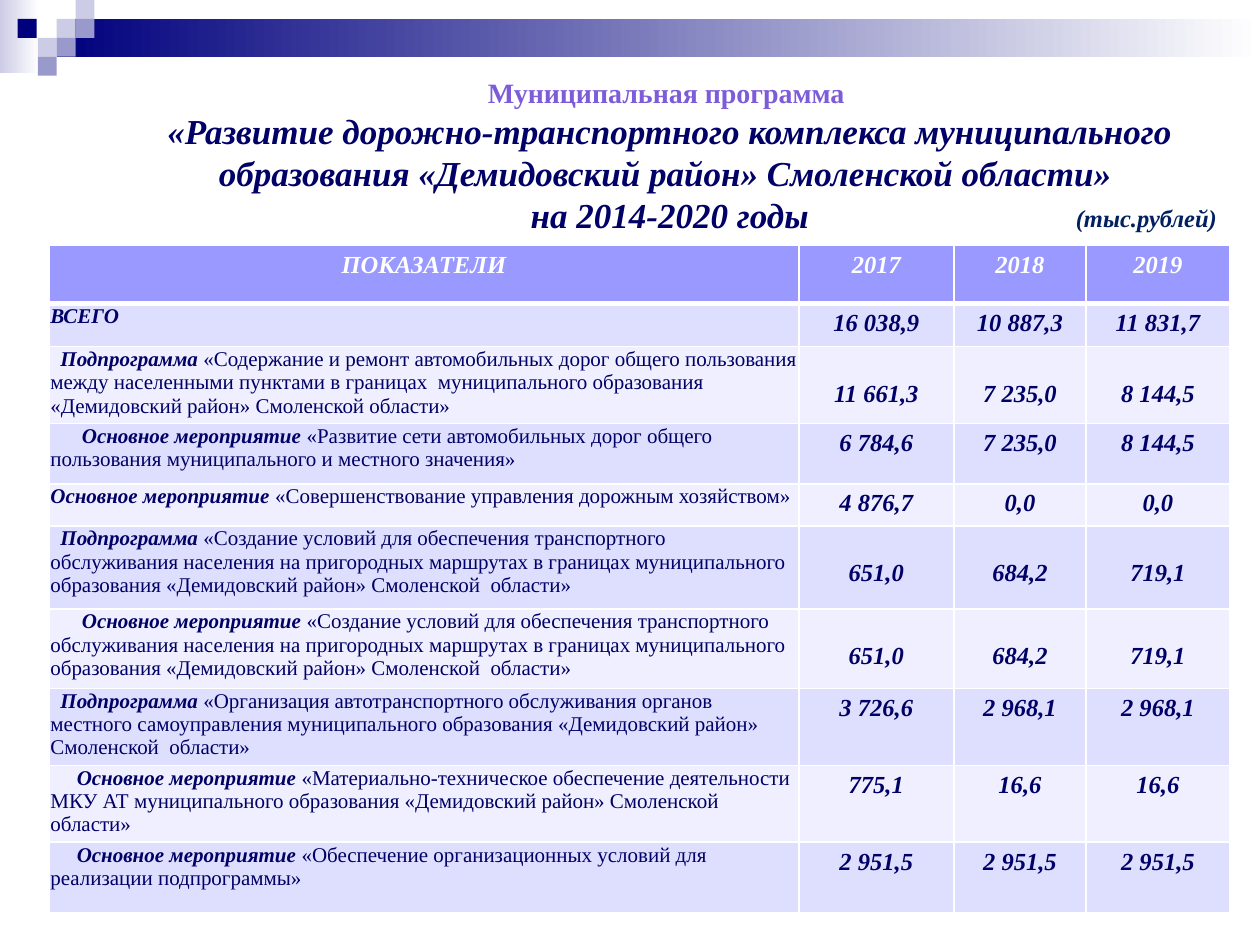
import pptx
import pptx.dml.color
import pptx.enum.shapes
import pptx.enum.text
import pptx.oxml
import pptx.oxml.ns
import pptx.util

Inches = pptx.util.Inches
Pt = pptx.util.Pt
FONT = "Times New Roman"
NAVY, WHITE = "000066", "FFFFFF"
BOLD = {"bold": True, "italic": True}
PLAIN = {"bold": False, "italic": False}
LEFT = pptx.enum.text.PP_ALIGN.LEFT
MID = pptx.enum.text.PP_ALIGN.CENTER
SUB, TASK = "Подпрограмма ", "Основное мероприятие "
ROUTES = ("«Создание условий для обеспечения транспортного обслуживания населения "
          "на пригородных маршрутах в границах муниципального образования "
          "«Демидовский район» Смоленской  области»")
HEAD = ["2017", "2018", "2019"]
ROWS = [
    (0.34, 0, "ВСЕГО", "", 0.05, ["16 038,9", "10 887,3", "11 831,7"]),
    (0.61, 0.08, SUB,
     "«Содержание и ремонт автомобильных дорог общего пользования между населенными "
     "пунктами в границах  муниципального образования «Демидовский район» "
     "Смоленской области»", 0.27, ["11 661,3", "7 235,0", "8 144,5"]),
    (0.48, 0.25, TASK,
     "«Развитие сети автомобильных дорог общего пользования муниципального "
     "и местного значения»", 0.05, ["6 784,6", "7 235,0", "8 144,5"]),
    (0.33, 0, TASK, "«Совершенствование управления дорожным хозяйством»",
     0.05, ["4 876,7", "0,0", "0,0"]),
    (0.66, 0.08, SUB, ROUTES, 0.27, ["651,0", "684,2", "719,1"]),
    (0.63, 0.25, TASK, ROUTES, 0.27, ["651,0", "684,2", "719,1"]),
    (0.61, 0.08, SUB,
     "«Организация автотранспортного обслуживания органов местного самоуправления "
     "муниципального образования «Демидовский район» Смоленской  области»",
     0.05, ["3 726,6", "2 968,1", "2 968,1"]),
    (0.61, 0.21, TASK,
     "«Материально-техническое обеспечение деятельности МКУ АТ муниципального "
     "образования «Демидовский район» Смоленской области»",
     0.05, ["775,1", "16,6", "16,6"]),
    (0.56, 0.21, TASK,
     "«Обеспечение организационных условий для реализации подпрограммы»",
     0.05, ["2 951,5", "2 951,5", "2 951,5"]),
]


def tint(code):
    return pptx.dml.color.RGBColor.from_string(code)


def put(item, vals):
    for name, val in vals.items():
        setattr(item, name, val)


def add_run(para, text, size, code, style):
    run = para.add_run()
    run.text = text
    put(run.font, {"name": FONT, "size": Pt(size), **style})
    run.font.color.rgb = tint(code)


def add_block(slide, x, y, w, h, *codes):
    kind = pptx.enum.shapes.MSO_SHAPE.RECTANGLE
    block = slide.shapes.add_shape(kind, *map(Inches, (x, y, w, h)))
    block.shadow.inherit = False
    block.line.fill.background()
    if len(codes) == 1:
        block.fill.solid()
        block.fill.fore_color.rgb = tint(codes[0])
        return
    block.fill.gradient()
    block.fill.gradient_angle = 0
    for stop, code in zip(block.fill.gradient_stops, codes):
        stop.color.rgb = tint(code)


def add_text(slide, x, y, w, h, lines, align, wrap):
    frame = slide.shapes.add_textbox(*map(Inches, (x, y, w, h))).text_frame
    frame.word_wrap = wrap
    for num, line in enumerate(lines):
        para = frame.add_paragraph() if num else frame.paragraphs[0]
        para.alignment = align
        add_run(para, *line)


def add_edge(cell, side, width):
    edge = pptx.oxml.parse_xml(
        f'<a:{side} {pptx.oxml.ns.nsdecls("a")} w="{Pt(width)}"><a:solidFill>'
        f'<a:srgbClr val="{WHITE}"/></a:solidFill></a:{side}>')
    cell._tc.get_or_add_tcPr().append(edge)


def fill_cell(cell, runs, align, fill, sides, low=1, high=1, indent=0):
    put(cell, sides)
    for side, width in (("lnL", 1), ("lnR", 1), ("lnT", high), ("lnB", low)):
        add_edge(cell, side, width)
    cell.fill.solid()
    cell.fill.fore_color.rgb = tint(fill)
    para = cell.text_frame.paragraphs[0]
    para.alignment = align
    if indent:
        para._p.get_or_add_pPr().set("indent", str(Inches(indent)))
    for run in runs:
        add_run(para, *run)


def add_grid(slide):
    tall = [0.46] + [row[0] for row in ROWS]
    wide = [5.95, 1.23, 1.05, 1.14]
    grid = slide.shapes.add_table(
        len(tall), len(wide), Inches(0.39), Inches(1.95),
        Inches(sum(wide)), Inches(sum(tall))).table
    for col, width in zip(grid.columns, wide):
        col.width = Inches(width)
    for row, height in zip(grid.rows, tall):
        row.height = Inches(height)
    for col, text in enumerate(["ПОКАЗАТЕЛИ"] + HEAD):
        fill_cell(grid.cell(0, col), [(text, 14, WHITE, BOLD)], MID, "9999FF", {}, low=3)
    tight = {"margin_left": Inches(0.01), "margin_top": Inches(0.01),
             "margin_right": Inches(0.01), "margin_bottom": 0}
    for num, (_, indent, lead, rest, top, vals) in enumerate(ROWS, 1):
        fill = "DEDEFF" if num % 2 else "EFEFFF"
        high = 3 if num == 1 else 1
        runs = [(lead, 12, NAVY, BOLD)]
        if rest:
            runs.append((rest, 12, NAVY, PLAIN))
        fill_cell(grid.cell(num, 0), runs, LEFT, fill, tight, high=high, indent=indent)
        for col, val in enumerate(vals, 1):
            fill_cell(grid.cell(num, col), [(val, 14, NAVY, BOLD)], MID, fill,
                      {"margin_top": Inches(top)}, high=high)


def add_decor(slide):
    pale, mauve, dark = "CCCCE6", "9999CC", "00007D"
    add_block(slide, 0, 0, 0.31, 0.58, pale, WHITE)
    add_block(slide, 0.45, 0.15, 9.55, 0.3, dark, WHITE)
    for x, y, code in ((0.45, 0.15, pale), (0.6, 0, pale), (0.6, 0.15, mauve),
                       (0.3, 0.3, pale), (0.14, 0.15, dark),
                       (0.45, 0.3, mauve), (0.3, 0.45, mauve)):
        add_block(slide, x, y, 0.15, 0.15, code)


def main():
    deck = pptx.Presentation()
    put(deck, {"slide_width": Inches(10), "slide_height": Inches(7.5)})
    slide = deck.slides.add_slide(deck.slide_layouts[6])
    add_decor(slide)
    add_text(slide, 1.02, 0.55, 8.59, 1.38, [
        ("Муниципальная программа ", 16, "7D5CDA", {"bold": True}),
        ("«Развитие дорожно-транспортного комплекса муниципального образования "
         "«Демидовский район» Смоленской области» ", 20, NAVY, BOLD),
        ("на 2014-2020 годы", 20, NAVY, BOLD)], MID, True)
    add_grid(slide)
    add_text(slide, 8.44, 1.56, 1.33, 0.34,
             [("(тыс.рублей)", 14, "002060", BOLD)], LEFT, False)
    deck.save("out.pptx")


if __name__ == "__main__":
    main()
